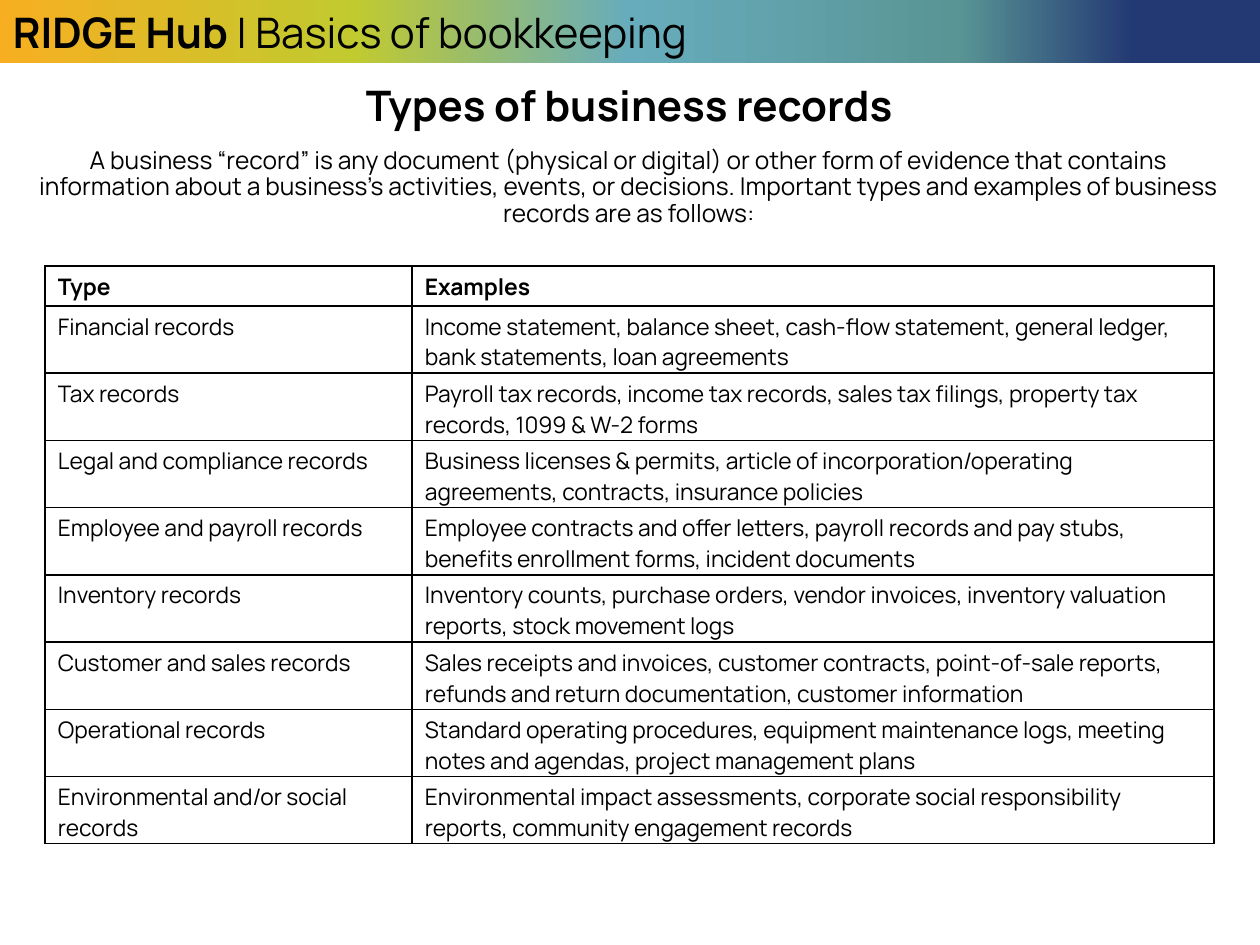
from dataclasses import dataclass

from lxml.etree import SubElement
from pptx import Presentation
from pptx.dml.color import RGBColor
from pptx.enum.shapes import MSO_SHAPE
from pptx.enum.text import MSO_ANCHOR, MSO_AUTO_SIZE, PP_ALIGN
from pptx.oxml.ns import qn
from pptx.util import Pt


@dataclass(frozen=True)
class Theme:
    font: str = "Manrope"
    ink: str = "000000"
    paper: str = "FFFFFF"
    title: int = 24
    body: int = 14
    cell: int = 13
    rule: int = 1
    band: tuple = ((0, "F7AF21"), (28, "C1CA2F"), (50, "67ACBC"),
                   (76, "599595"), (90, "233973"))


T = Theme()
EMU_PER_PX = 914400 / 126
WIDTH, HEIGHT = 1260, 945
INSET = 13

RECORDS = [
    ("Type", "Examples"),
    ("Financial records",
     "Income statement, balance sheet, cash-flow statement, general ledger, "
     "bank statements, loan agreements"),
    ("Tax records",
     "Payroll tax records, income tax records, sales tax filings, property tax "
     "records, 1099 & W-2 forms"),
    ("Legal and compliance records",
     "Business licenses & permits, article of incorporation/operating "
     "agreements, contracts, insurance policies"),
    ("Employee and payroll records",
     "Employee contracts and offer letters, payroll records and pay stubs, "
     "benefits enrollment forms, incident documents"),
    ("Inventory records",
     "Inventory counts, purchase orders, vendor invoices, inventory valuation "
     "reports, stock movement logs"),
    ("Customer and sales records",
     "Sales receipts and invoices, customer contracts, point-of-sale reports, "
     "refunds and return documentation, customer information"),
    ("Operational records",
     "Standard operating procedures, equipment maintenance logs, meeting "
     "notes and agendas, project management plans"),
    ("Environmental and/or social records",
     "Environmental impact assessments, corporate social responsibility "
     "reports, community engagement records"),
]


def px(n):
    return round(n * EMU_PER_PX)


def place(sp, box):
    sp.left, sp.top, sp.width, sp.height = map(px, box)


def add_run(p, text, size, bold=False):
    r = p.add_run()
    r.text = text
    r.font.name = T.font
    r.font.size = Pt(size)
    r.font.bold = bold
    r.font.color.rgb = RGBColor.from_string(T.ink)


def set_frame(tf, anchor):
    tf.word_wrap = True
    tf.auto_size = MSO_AUTO_SIZE.NONE
    tf.vertical_anchor = anchor
    tf.margin_left = tf.margin_right = px(INSET)
    tf.margin_top = tf.margin_bottom = px(6)


def add_color(parent, color):
    SubElement(parent, qn("a:srgbClr"), val=color)


def add_title(s, box):
    sp = s.shapes.title
    place(sp, box)
    set_frame(sp.text_frame, MSO_ANCHOR.MIDDLE)
    p = sp.text_frame.paragraphs[0]
    p.alignment = PP_ALIGN.CENTER
    add_run(p, "Types of business records", T.title, True)


def add_band(s, box):
    sp = s.shapes.add_shape(MSO_SHAPE.RECTANGLE, *map(px, box))
    sp.shadow.inherit = False
    sp.line.fill.background()
    sp.fill.gradient()
    sp.fill.gradient_angle = 0
    stops = sp._element.spPr.find(qn("a:gradFill")).find(qn("a:gsLst"))
    for stop in list(stops):
        stops.remove(stop)
    for pos, color in T.band:
        add_color(SubElement(stops, qn("a:gs"), pos=str(pos * 1000)), color)
    set_frame(sp.text_frame, MSO_ANCHOR.MIDDLE)
    p = sp.text_frame.paragraphs[0]
    p.alignment = PP_ALIGN.LEFT
    add_run(p, "RIDGE Hub ", T.title, True)
    add_run(p, "| Basics of bookkeeping", T.title)


def add_intro(s, box):
    tf = s.shapes.add_textbox(*map(px, box)).text_frame
    set_frame(tf, MSO_ANCHOR.TOP)
    p = tf.paragraphs[0]
    p.alignment = PP_ALIGN.CENTER
    p.line_spacing = 0.9
    add_run(p, "A business “record” is any document (physical or digital) or "
               "other form of evidence that contains information about a "
               "business's activities, events, or decisions. Important types "
               "and examples of business records are as follows:", T.body)


def format_cell(cell, text, bold):
    cell.margin_left = cell.margin_right = px(INSET)
    cell.margin_top, cell.margin_bottom = px(5), 0
    tcPr = cell._tc.get_or_add_tcPr()
    for side in ("lnL", "lnR", "lnT", "lnB"):
        ln = SubElement(tcPr, qn(f"a:{side}"), w=str(Pt(T.rule)))
        add_color(SubElement(ln, qn("a:solidFill")), T.ink)
    cell.fill.solid()
    cell.fill.fore_color.rgb = RGBColor.from_string(T.paper)
    add_run(cell.text_frame.paragraphs[0], text, T.cell, bold)


def add_records(s, box, type_width=367, header_height=40):
    left, top, width, height = box
    table = s.shapes.add_table(len(RECORDS), 2, *map(px, box)).table
    table.first_row = table.horz_banding = False
    table.columns[0].width = px(type_width)
    table.columns[1].width = px(width - type_width)
    row_height = (height - header_height) / (len(RECORDS) - 1)
    for i, record in enumerate(RECORDS):
        table.rows[i].height = px(row_height if i else header_height)
        for j, text in enumerate(record):
            format_cell(table.cell(i, j), text, i == 0)


def main():
    prs = Presentation()
    prs.slide_width, prs.slide_height = px(WIDTH), px(HEIGHT)
    s = prs.slides.add_slide(prs.slide_layouts[5])
    add_title(s, (25, 73, 1208, 63))
    add_band(s, (0, 0, WIDTH, 63))
    add_intro(s, (20, 142, 1218, 102))
    add_records(s, (45, 266, 1169, 578))
    prs.save("out.pptx")


if __name__ == "__main__":
    main()
